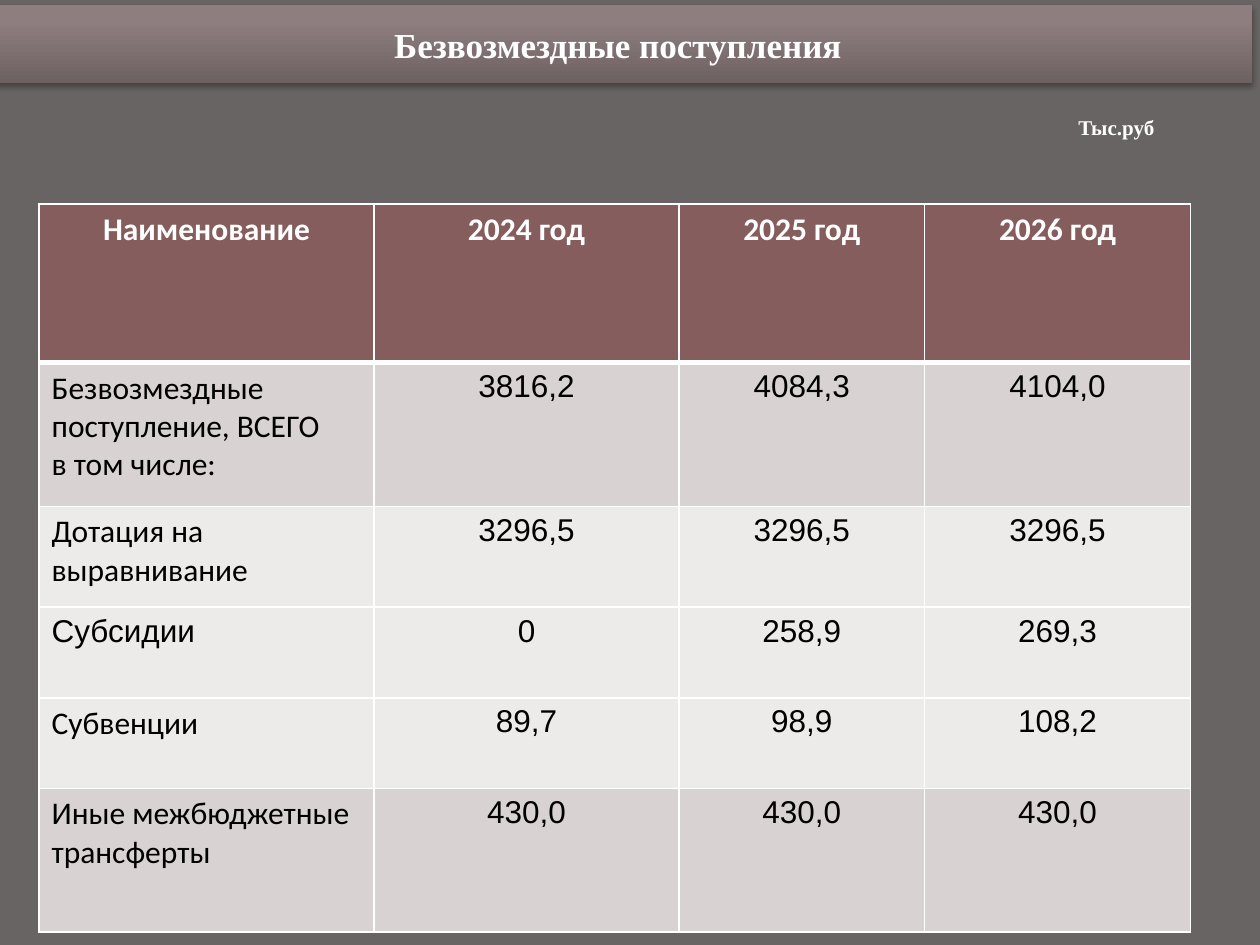
from copy import deepcopy
from dataclasses import dataclass

from lxml.etree import SubElement
from pptx import Presentation
from pptx.dml.color import RGBColor
from pptx.enum.shapes import MSO_SHAPE
from pptx.enum.text import MSO_ANCHOR, PP_ALIGN as Align
from pptx.oxml.ns import qn
from pptx.util import Pt

COLORS = {
    "background": "696464",
    "white": "FFFFFF",
    "black": "000000",
    "header": "855D5D",
    "dark band": "D9D2D2",
    "light band": "EDEAEA",
}
BAR_GRADIENT = [(0, "6E6162"), (0.8, "8E7E7F"), (1, "8F7E80")]
COLUMN_WIDTHS = [191.5, 174.2, 140.4, 151.9]
THIN, THICK = 1, 3


@dataclass
class TextStyle:
    font: str
    size: float
    color: str = "black"
    bold: bool = False
    align: Align = Align.CENTER


@dataclass
class Row:
    height: float
    fill: str
    label: str
    values: list[str]
    label_style: TextStyle
    value_style: TextStyle
    top: float = THIN
    bottom: float = THIN


TITLE = TextStyle("Times New Roman", 20, "white", True)
UNIT = TextStyle("Times New Roman", 12, "white", True)
HEADER = TextStyle("Calibri", 18, "white", True)
LABEL = TextStyle("Calibri", 18, align=Align.LEFT)
ARIAL_LABEL = TextStyle("Arial", 18, align=Align.LEFT)
VALUE = TextStyle("Arial", 18)

ROWS = [
    Row(90.7, "header", "Наименование", ["2024 год", "2025 год", "2026 год"],
        HEADER, HEADER, bottom=THICK),
    Row(82.1, "dark band", "Безвозмездные поступление, ВСЕГО\nв том числе:",
        ["3816,2", "4084,3", "4104,0"], LABEL, VALUE, top=THICK),
    Row(57.6, "light band", "Дотация на выравнивание",
        ["3296,5", "3296,5", "3296,5"], LABEL, VALUE),
    Row(51.8, "light band", "Субсидии", ["0", "258,9", "269,3"], ARIAL_LABEL, VALUE),
    Row(51.8, "light band", "Субвенции", ["89,7", "98,9", "108,2"], LABEL, VALUE),
    Row(82.1, "dark band", "Иные межбюджетные трансферты",
        ["430,0", "430,0", "430,0"], LABEL, VALUE),
]


def rgb(name: str) -> RGBColor:
    return RGBColor.from_string(COLORS[name])


def write_text(frame, text: str, style: TextStyle) -> None:
    frame.text = text
    for para in frame.paragraphs:
        para.alignment = style.align
        para.font.name = style.font
        para.font.size = Pt(style.size)
        para.font.bold = style.bold
        para.font.color.rgb = rgb(style.color)


def add_shadow(shape) -> None:
    shape.shadow.inherit = False
    effects = shape._element.spPr.find(qn("a:effectLst"))
    shadow = SubElement(effects, qn("a:outerShdw"), blurRad=str(Pt(3.1)),
                        dist=str(Pt(1.8)), dir="5400000", rotWithShape="0")
    color = SubElement(shadow, qn("a:srgbClr"), val=COLORS["black"])
    SubElement(color, qn("a:alpha"), val="35000")


def add_title_bar(slide) -> None:
    bar = slide.shapes.add_shape(MSO_SHAPE.RECTANGLE, Pt(-4.3), Pt(2.9), Pt(720), Pt(44.6))
    bar.fill.gradient()
    bar.fill.gradient_angle = 90
    stop_list = bar._element.spPr.find(".//" + qn("a:gsLst"))
    stop_list.append(deepcopy(stop_list[0]))
    for stop, (position, color) in zip(bar.fill.gradient_stops, BAR_GRADIENT):
        stop.position = position
        stop.color.rgb = RGBColor.from_string(color)
    bar.line.fill.background()
    add_shadow(bar)
    bar.text_frame.vertical_anchor = MSO_ANCHOR.MIDDLE
    # The trailing space shifts the centred title slightly to the left
    write_text(bar.text_frame, "Безвозмездные поступления ", TITLE)


def add_unit_label(slide) -> None:
    box = slide.shapes.add_textbox(Pt(584.6), Pt(61.9), Pt(106.6), Pt(21.6))
    box.text_frame.word_wrap = True
    write_text(box.text_frame, "Тыс.руб", UNIT)


def set_borders(cell, top: float, bottom: float) -> None:
    properties = cell._tc.get_or_add_tcPr()
    for side, width in {"L": THIN, "R": THIN, "T": top, "B": bottom}.items():
        line = SubElement(properties, qn(f"a:ln{side}"), w=str(Pt(width)))
        SubElement(SubElement(line, qn("a:solidFill")), qn("a:srgbClr"), val=COLORS["white"])


def add_income_table(slide) -> None:
    frame = slide.shapes.add_table(
        len(ROWS), len(COLUMN_WIDTHS), Pt(22.3), Pt(116.6),
        Pt(sum(COLUMN_WIDTHS)), Pt(sum(row.height for row in ROWS)))
    table = frame.table
    table.horz_banding = False
    for column, width in zip(table.columns, COLUMN_WIDTHS):
        column.width = Pt(width)
    for row_index, row in enumerate(ROWS):
        table.rows[row_index].height = Pt(row.height)
        for column_index, text in enumerate([row.label, *row.values]):
            cell = table.cell(row_index, column_index)
            set_borders(cell, row.top, row.bottom)
            cell.fill.solid()
            cell.fill.fore_color.rgb = rgb(row.fill)
            style = row.value_style if column_index else row.label_style
            write_text(cell.text_frame, text, style)


def main() -> None:
    deck = Presentation()
    deck.slide_width, deck.slide_height = Pt(720), Pt(540)
    slide = deck.slides.add_slide(deck.slide_layouts[6])
    slide.background.fill.solid()
    slide.background.fill.fore_color.rgb = rgb("background")
    add_title_bar(slide)
    add_unit_label(slide)
    add_income_table(slide)
    deck.save("out.pptx")


if __name__ == "__main__":
    main()
